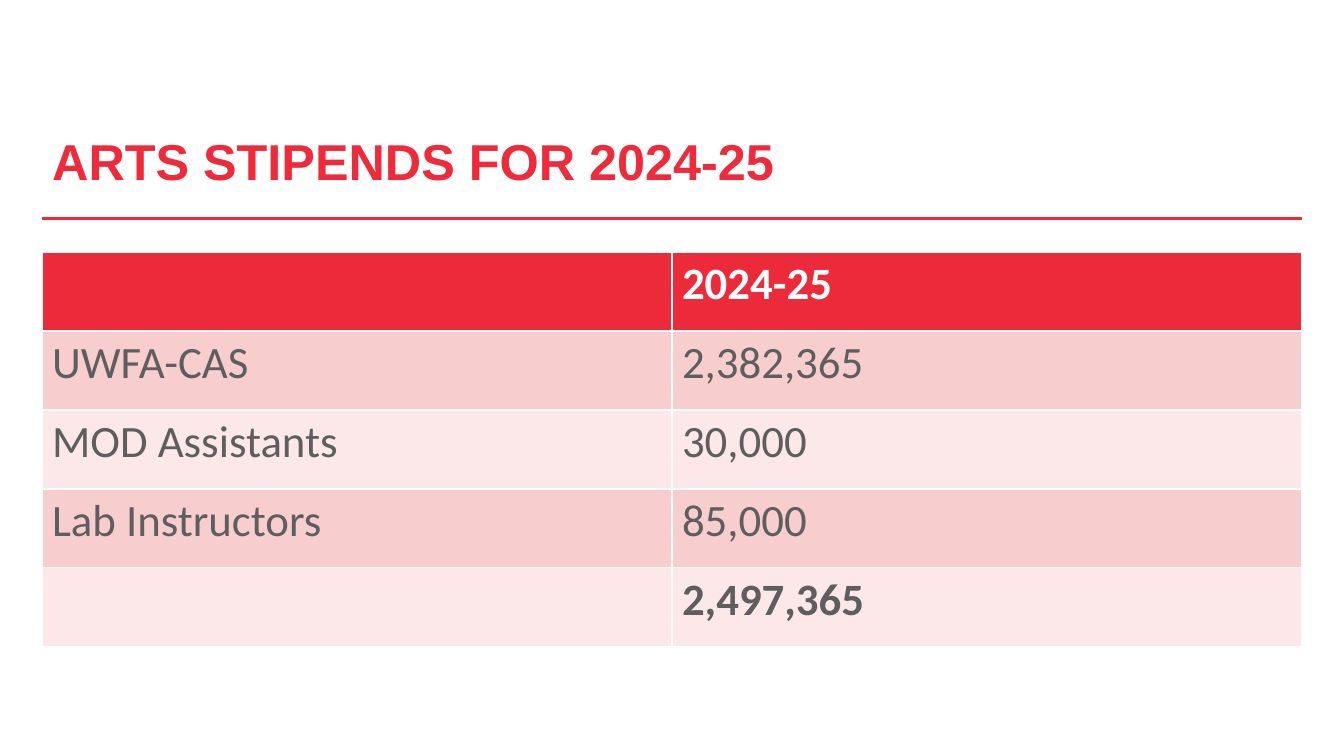
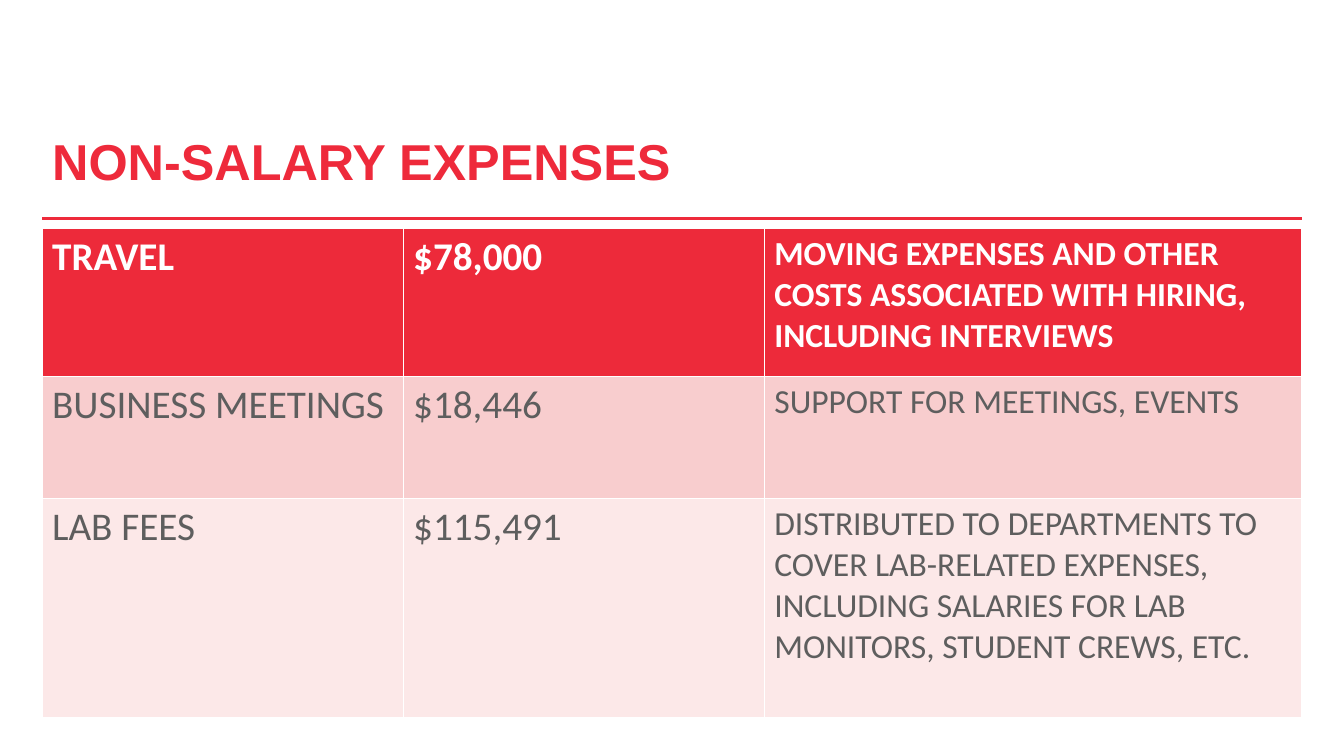
from pptx import Presentation
from pptx.dml.color import RGBColor
from pptx.enum.shapes import MSO_CONNECTOR
from pptx.enum.text import MSO_ANCHOR, MSO_AUTO_SIZE, PP_ALIGN
from pptx.util import Cm, Pt
from lxml.etree import SubElement
from pptx.oxml.ns import qn

RED, HEADER, GREY, WHITE = "EE2A3B", "ED2A3A", "5E5E5E", "FFFFFF"
BANDS = ["F8CDCE", "FCE8E8"]
LEFT, WIDTH = 1.06, 31.75
TITLE_TOP, TITLE_HEIGHT, RULE_TOP = 3.39, 1.48, 5.5


def rgb(value):
    return RGBColor.from_string(value)


def set_font(p, name, size, color, bold):
    p.font.name = name
    p.font.size = Pt(size)
    p.font.color.rgb = rgb(color)
    p.font.bold = bold


def add_title(s, text):
    title = s.shapes.title
    title.left, title.top = Cm(LEFT), Cm(TITLE_TOP)
    title.width, title.height = Cm(WIDTH), Cm(TITLE_HEIGHT)
    tf = title.text_frame
    tf.text = text
    tf.word_wrap = True
    tf.auto_size = MSO_AUTO_SIZE.NONE
    tf.vertical_anchor = MSO_ANCHOR.MIDDLE
    p = tf.paragraphs[0]
    p.alignment = PP_ALIGN.LEFT
    p.line_spacing = 0.9
    p.space_before = Pt(0)
    set_font(p, "Arial", 36, RED, True)


def add_rule(s):
    rule = s.shapes.add_connector(
        MSO_CONNECTOR.STRAIGHT,
        Cm(LEFT), Cm(RULE_TOP), Cm(LEFT + WIDTH), Cm(RULE_TOP))
    rule.line.color.rgb = rgb(RED)
    rule.line.width = Pt(2)
    SubElement(rule._element.spPr, qn("a:effectLst"))


def add_table(s, top, rows, widths, heights, sizes, total_row=False):
    frame = s.shapes.add_table(
        len(rows), len(widths), Cm(LEFT), Cm(top), Cm(sum(widths)), Cm(sum(heights)))
    table = frame.table
    for column, width in zip(table.columns, widths):
        column.width = Cm(width)
    for i, (row, height) in enumerate(zip(rows, heights)):
        table.rows[i].height = Cm(height)
        header = i == 0
        bold = header or (total_row and i == len(rows) - 1)
        for j, (text, size) in enumerate(zip(row, sizes)):
            cell = table.cell(i, j)
            cell.fill.solid()
            cell.fill.fore_color.rgb = rgb(HEADER if header else BANDS[(i - 1) % 2])
            if text:
                cell.text = text
                set_font(cell.text_frame.paragraphs[0], "Calibri", size,
                         WHITE if header else GREY, bold)


def add_table_slide(prs, title, **table):
    s = prs.slides.add_slide(prs.slide_layouts[5])
    add_rule(s)
    add_title(s, title)
    add_table(s, **table)


def main():
    prs = Presentation()
    prs.slide_width, prs.slide_height = Cm(33.87), Cm(19.05)
    add_table_slide(
        prs, "ARTS STIPENDS FOR 2024-25",
        top=6.35,
        rows=[
            ["", "2024-25"],
            ["UWFA-CAS", "2,382,365"],
            ["MOD Assistants", "30,000"],
            ["Lab Instructors", "85,000"],
            ["", "2,497,365"],
        ],
        widths=[WIDTH / 2] * 2,
        heights=[1.99] * 5,
        sizes=[32, 32],
        total_row=True)
    add_table_slide(
        prs, "NON-SALARY EXPENSES",
        top=5.75,
        rows=[
            ["TRAVEL", "$78,000",
             "MOVING EXPENSES AND OTHER COSTS ASSOCIATED WITH HIRING, "
             "INCLUDING INTERVIEWS"],
            ["BUSINESS MEETINGS", "$18,446", "SUPPORT FOR MEETINGS, EVENTS"],
            ["LAB FEES", "$115,491",
             "DISTRIBUTED TO DEPARTMENTS TO COVER LAB-RELATED EXPENSES, "
             "INCLUDING SALARIES FOR LAB MONITORS, STUDENT CREWS, ETC."],
        ],
        widths=[9.1, 9.1, 13.55],
        heights=[3.73, 3.08, 5.52],
        sizes=[28, 28, 24])
    prs.save("out.pptx")


if __name__ == "__main__":
    main()
